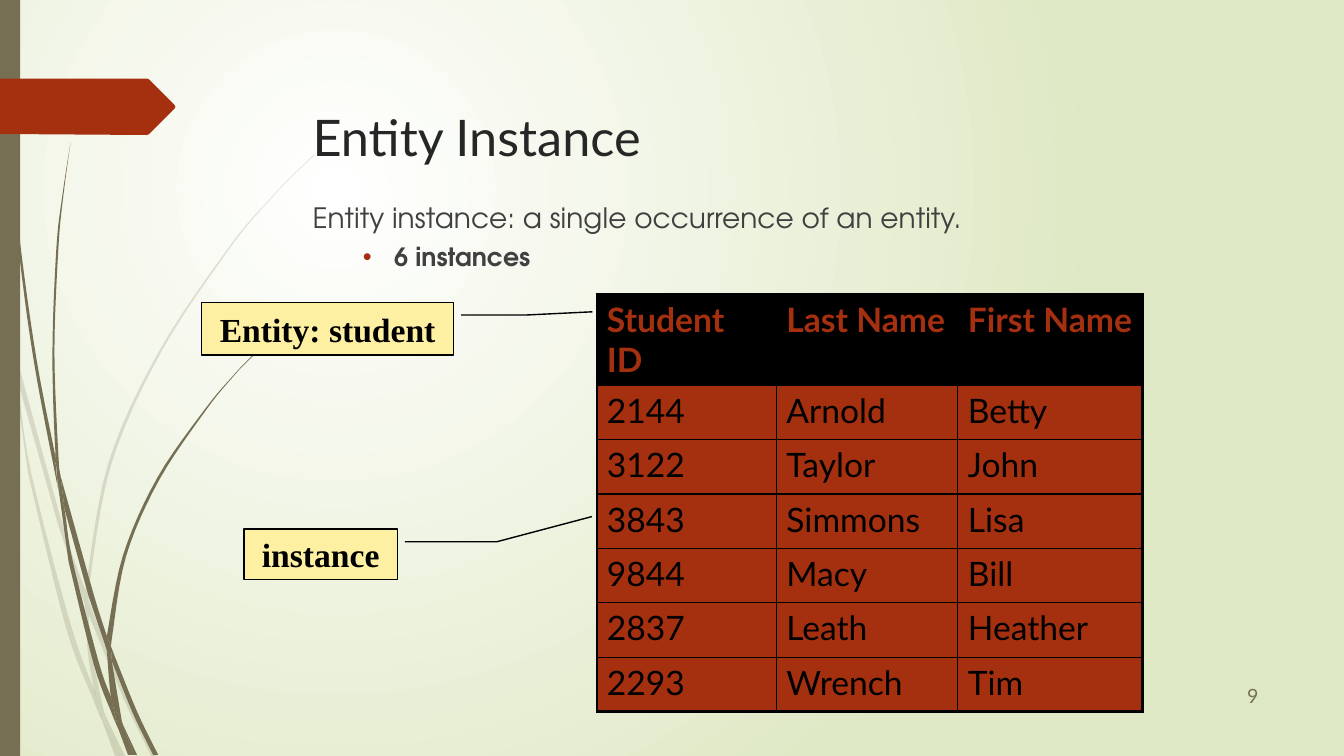
from dataclasses import dataclass

from lxml import etree
from pptx import Presentation
from pptx.dml.color import RGBColor
from pptx.enum.shapes import MSO_SHAPE
from pptx.enum.text import MSO_ANCHOR, MSO_AUTO_SIZE, PP_ALIGN
from pptx.oxml.ns import qn
from pptx.util import Pt

PX = 9144  # 100 px to the inch
LEFT, CENTER, RIGHT = PP_ALIGN.LEFT, PP_ALIGN.CENTER, PP_ALIGN.RIGHT
TOP, MIDDLE = MSO_ANCHOR.TOP, MSO_ANCHOR.MIDDLE
NO_FIT = MSO_AUTO_SIZE.NONE
RECTANGLE, CALLOUT = MSO_SHAPE.RECTANGLE, MSO_SHAPE.LINE_CALLOUT_2


@dataclass(frozen=True)
class Theme:
    white: str = "FFFFFF"
    mist: str = "DFE8C4"
    olive: str = "766F54"
    rust: str = "A53010"
    cream: str = "FEF0A2"
    black: str = "000000"
    heading: str = "262626"
    text: str = "404040"
    sans: str = "Lato"
    round_sans: str = "TeX Gyre Adventor"
    serif: str = "Times New Roman"
    title_size: int = 36
    label_size: int = 24
    body_size: int = 20
    detail_size: int = 18
    number_size: int = 14


# Each grass blade is a list of sides; each side is a smooth run of points
PALE_BLADES = [
    [[(11, 350), (9, 322), (0, 282)], [(0, 299), (10, 344), (11, 350)]],
    [[(58, 522), (84, 599)], [(85, 586), (62, 520), (14, 345)], [(17, 376), (58, 522)]],
    [[(92, 607), (88, 596)], [(88, 610), (123, 694), (150, 750)],
     [(155, 750), (127, 692), (92, 607)]],
    [[(119, 750), (124, 750)], [(105, 711), (119, 750)]],
    [[(93, 683), (70, 619), (31, 469), (17, 376), (11, 350)],
     [(28, 470), (65, 621), (92, 693), (101, 714)], [(99, 707), (93, 683)]],
    [[(84, 599), (87, 646), (93, 683), (96, 692), (105, 711)],
     [(103, 706), (91, 646), (88, 610)], [(88, 608), (84, 599)]],
    [[(88, 584), (110, 462), (160, 349), (229, 245), (268, 198), (290, 175), (312, 154)],
     [(312, 153), (289, 175), (268, 197), (228, 244), (158, 348), (107, 461), (85, 584)],
     [(85, 586), (88, 596)]],
    [[(101, 714), (114, 750)], [(119, 750), (101, 714)]],
    [[(88, 608), (88, 610)], [(88, 596), (85, 586)], [(84, 599), (88, 608)]],
    [[(96, 692), (93, 683)], [(99, 707), (101, 714), (119, 750)], [(105, 711), (96, 692)]],
]
DARK_BLADES = [
    [[(3, 0), (4, 48), (7, 110), (17, 233), (33, 355), (56, 477), (57, 481)],
     [(55, 457), (55, 453), (36, 355), (19, 232), (8, 109), (5, 48), (4, 0)]],
    [[(88, 592), (106, 645)], [(106, 633), (106, 631), (93, 590), (60, 472)],
     [(64, 505), (88, 592)]],
    [[(113, 649), (110, 641)], [(111, 656), (132, 708), (152, 749)],
     [(157, 749), (136, 706), (113, 649)]],
    [[(110, 691), (98, 657), (72, 556), (64, 505), (57, 477)],
     [(68, 557), (93, 659), (111, 708), (117, 722)], [(116, 717), (110, 691)]],
    [[(60, 472), (58, 453), (54, 349), (58, 245), (63, 193), (70, 141)],
     [(70, 141), (62, 193), (56, 245), (52, 349), (55, 449), (60, 472)]],
    [[(133, 749), (136, 749)], [(122, 719), (133, 749)]],
    [[(57, 477), (64, 505)], [(60, 472), (55, 449)], [(55, 453), (57, 477)]],
    [[(111, 633), (125, 552), (158, 476), (205, 406), (231, 374), (245, 359), (261, 344)],
     [(260, 344), (245, 358), (231, 373), (204, 405), (156, 474), (122, 551), (106, 631)],
     [(110, 641), (111, 633)]],
    [[(117, 722), (127, 749)], [(131, 749), (117, 722)]],
    [[(106, 645), (110, 691), (116, 706), (122, 719)], [(121, 716), (111, 656)],
     [(109, 651), (106, 645)]],
    [[(106, 645), (109, 651), (111, 656)], [(110, 641), (106, 631)], [(106, 633), (106, 645)]],
    [[(116, 706), (110, 691)], [(116, 717), (117, 722), (130, 749)],
     [(133, 749), (122, 719), (116, 706)]],
]
TAG = [(0, 78), (146, 78), (148, 79), (173, 104), (174, 106), (173, 108), (148, 133),
       (146, 134), (0, 133)]

STUDENTS = [
    ("Student ID", "Last Name", "First Name"),
    ("2144", "Arnold", "Betty"),
    ("3122", "Taylor", "John"),
    ("3843", "Simmons", "Lisa"),
    ("9844", "Macy", "Bill"),
    ("2837", "Leath", "Heather"),
    ("2293", "Wrench", "Tim"),
]


def smooth(points, steps=6):
    """Return a Catmull-Rom curve through the points."""
    if len(points) < 3:
        return points
    padded = [points[0], *points, points[-1]]
    curve = [points[0]]
    for a, b, c, d in zip(padded, padded[1:], padded[2:], padded[3:]):
        for step in range(1, steps + 1):
            t = step / steps
            curve.append(tuple(
                (2 * q + (r - p) * t + (2 * p - 5 * q + 4 * r - s) * t**2
                 + (3 * q - p - 3 * r + s) * t**3) / 2
                for p, q, r, s in zip(a, b, c, d)))
    return curve


def assign(target, formats):
    for name, value in formats.items():
        setattr(target, name, value)


class SlideBuilder:
    def __init__(self, page, theme):
        self.page, self.theme = page, theme

    def background(self, inner, outer):
        fill = self.page.background.fill
        fill.gradient()
        for stop, position, color in zip(fill.gradient_stops, (0, 1), (inner, outer)):
            stop.position = position
            stop.color.rgb = RGBColor.from_string(color)
        linear = next(self.page.element.iter(qn("a:lin")))
        circle = etree.Element(qn("a:path"), {"path": "circle"})
        etree.SubElement(circle, qn("a:fillToRect"), l="50000", t="50000", r="100000", b="100000")
        linear.getparent().replace(linear, circle)

    def paint(self, shape, color, line=None):
        shape.shadow.inherit = False
        shape.fill.solid()
        shape.fill.fore_color.rgb = RGBColor.from_string(color)
        if line:
            shape.line.color.rgb = RGBColor.from_string(line)
            shape.line.width = Pt(1)
        else:
            shape.line.fill.background()

    def outline(self, shapes, points, color, alpha=None):
        corners = [(round(x * PX), round(y * PX)) for x, y in points]
        builder = shapes.build_freeform(*corners[0])
        builder.add_line_segments(corners[1:], close=True)
        shape = builder.convert_to_shape()
        self.paint(shape, color)
        if alpha:
            tint = next(shape.element.spPr.iter(qn("a:srgbClr")))
            etree.SubElement(tint, qn("a:alpha"), val=str(alpha * 1000))

    def blades(self, blades, color, alpha=None):
        group = self.page.shapes.add_group_shape()
        for sides in blades:
            points = [point for side in sides for point in smooth(side)]
            self.outline(group.shapes, points, color, alpha)

    def shape(self, kind, place, color, line=None):
        shape = self.page.shapes.add_shape(kind, *(n * PX for n in place))
        self.paint(shape, color, line)
        return shape

    def add_span(self, para, text, font, size, color, bold=False, align=LEFT):
        span = para.add_run()
        span.text = text
        para.alignment = align
        assign(span.font, {"name": font, "size": Pt(size), "bold": bold})
        span.font.color.rgb = RGBColor.from_string(color)

    def frame(self, box, anchor):
        assign(box.text_frame, {"word_wrap": True, "auto_size": NO_FIT, "vertical_anchor": anchor})
        return box.text_frame.paragraphs[0]

    def placeholder(self, box, place):
        left, top, width, height = (n * PX for n in place)
        assign(box, {"left": left, "top": top, "width": width, "height": height})
        self.page.shapes.element.append(box.element)  # in front of the decoration
        return self.frame(box, TOP)

    def bullet(self, para, margin, hanging, mark=None):
        props = para._p.get_or_add_pPr()
        props.set("marL", str(margin * PX))
        props.set("indent", str(-hanging * PX))
        if mark:
            color = etree.SubElement(props, qn("a:buClr"))
            etree.SubElement(color, qn("a:srgbClr"), val=self.theme.rust)
            etree.SubElement(props, qn("a:buChar"), char=mark)
        else:
            etree.SubElement(props, qn("a:buNone"))

    def text(self, place, text, font, size, color, align):
        box = self.page.shapes.add_textbox(*(n * PX for n in place))
        self.add_span(self.frame(box, MIDDLE), text, font, size, color, align=align)

    def callout(self, place, text, leader):
        box = self.shape(CALLOUT, place, self.theme.cream, self.theme.black)
        for index, value in enumerate(leader):
            box.adjustments[index] = value
        self.add_span(self.frame(box, MIDDLE), text, self.theme.serif, self.theme.label_size,
                      self.theme.black, True, CENTER)

    def table(self, place, records, widths, heights):
        theme = self.theme
        rows, columns = len(records), len(widths)
        table = self.page.shapes.add_table(rows, columns, *(n * PX for n in place)).table
        assign(table, {"first_row": False, "horz_banding": False})
        for column, width in zip(table.columns, widths):
            column.width = width * PX
        for r, record in enumerate(records):
            table.rows[r].height = heights[r] * PX
            back, ink = (theme.rust, theme.black) if r else (theme.black, theme.rust)
            for c, value in enumerate(record):
                cell = table.cell(r, c)
                cell.fill.solid()
                cell.fill.fore_color.rgb = RGBColor.from_string(back)
                self.add_span(cell.text_frame.paragraphs[0], value, theme.sans,
                              theme.label_size, ink, r == 0)
                outer = {"L": c == 0, "R": c == columns - 1, "T": r == 0, "B": r == rows - 1}
                self.borders(cell, outer)

    def borders(self, cell, outer):
        props = cell._tc.get_or_add_tcPr()
        for index, (side, thick) in enumerate(outer.items()):
            line = etree.Element(qn(f"a:ln{side}"), w=str(int(Pt(2.25 if thick else 1))))
            solid = etree.SubElement(line, qn("a:solidFill"))
            etree.SubElement(solid, qn("a:srgbClr"), val=self.theme.black)
            props.insert(index, line)


def main():
    deck = Presentation()
    assign(deck, {"slide_width": 1333 * PX, "slide_height": 750 * PX})
    page = deck.slides.add_slide(deck.slide_layouts[1])
    theme = Theme()
    slide = SlideBuilder(page, theme)

    # Background and decoration
    slide.background(theme.white, theme.mist)
    slide.blades(PALE_BLADES, theme.olive, 20)
    slide.blades(DARK_BLADES, theme.olive)
    slide.shape(RECTANGLE, (0, 0, 20, 750), theme.olive)
    slide.outline(page.shapes, TAG, theme.rust)
    slide.text((1133, 670, 125, 41), "9", theme.sans, theme.number_size, theme.olive, RIGHT)

    # Title and definition
    title, body = page.shapes.title, page.placeholders[1]
    para = slide.placeholder(title, (300, 100, 395, 92))
    slide.add_span(para, "Entity Instance", theme.sans, theme.title_size, theme.heading)
    para = slide.placeholder(body, (300, 200, 867, 75))
    assign(para, {"line_spacing": 0.8, "space_before": Pt(0)})
    slide.bullet(para, 38, 38)
    slide.add_span(para, "Entity instance: a single occurrence of an entity.",
                   theme.round_sans, theme.body_size, theme.text)
    para = body.text_frame.add_paragraph()
    assign(para, {"level": 1, "line_spacing": 0.8, "space_before": Pt(10)})
    slide.bullet(para, 81, 31, "•")
    slide.add_span(para, "6 instances", theme.round_sans, theme.detail_size, theme.text, True)

    # Student table and its callouts
    slide.table((592, 292, 541, 414), STUDENTS, (178, 180, 183), [90] + [54] * 6)
    slide.callout((200, 300, 250, 52), "Entity: student", (0.24, 1.03, 0.24, 1.29, 0.18, 1.55))
    slide.callout((242, 525, 152, 50), "instance", (0.25, 1.05, 0.25, 1.65, -0.25, 2.27))

    deck.save("out.pptx")


if __name__ == "__main__":
    main()
